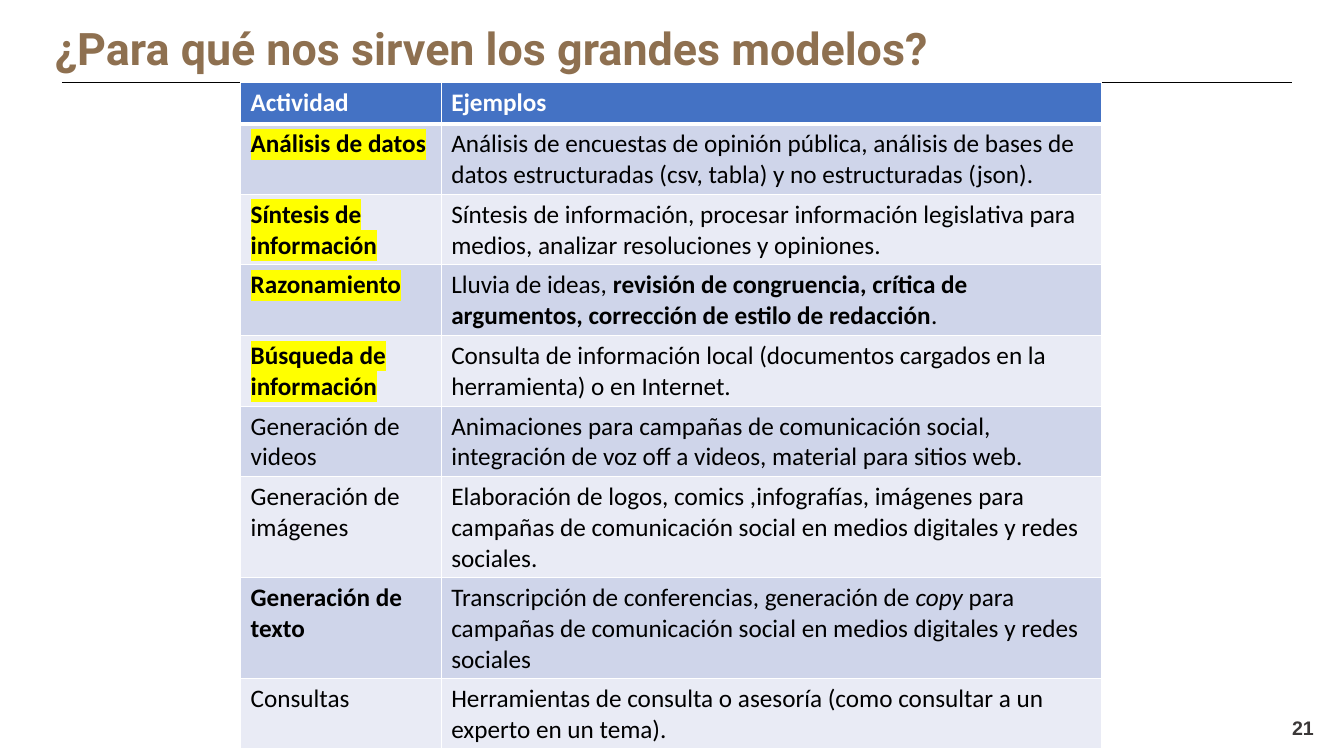
import pptx
import pptx.util
import pptx.dml.color
import pptx.enum.shapes
import pptx.enum.text
import pptx.oxml
import pptx.oxml.ns

WIDTH, HEIGHT = 13.33, 7.5
BLACK, WHITE, YELLOW = "000000", "FFFFFF", "FFFF00"
HEADER_FILL, BAND_FILLS = "4472C4", ("CFD5EA", "E9EBF5")
COLUMN_WIDTHS = (1.99, 6.55)
ROW_HEIGHT = 0.41

# Each row: activity, its style, and pieces of (example text, style)
ACTIVITIES = [
    ("Análisis de datos", "marked", [(
        "Análisis de encuestas de opinión pública, análisis de bases de datos "
        "estructuradas (csv, tabla) y no estructuradas (json).", "plain")]),
    ("Síntesis de información", "marked", [(
        "Síntesis de información, procesar información legislativa para "
        "medios, analizar resoluciones y opiniones.", "plain")]),
    ("Razonamiento", "marked", [
        ("Lluvia de ideas, ", "plain"),
        ("revisión de congruencia, crítica de argumentos, corrección de "
         "estilo de redacción", "bold"),
        (".", "plain")]),
    ("Búsqueda de información", "marked", [(
        "Consulta de información local (documentos cargados en la "
        "herramienta) o en Internet.", "plain")]),
    ("Generación de videos", "plain", [(
        "Animaciones para campañas de comunicación social, integración de "
        "voz off a videos, material para sitios web.", "plain")]),
    ("Generación de imágenes", "plain", [(
        "Elaboración de logos, comics ,infografías, imágenes para campañas "
        "de comunicación social en medios digitales y redes sociales.", "plain")]),
    ("Generación de texto", "bold", [
        ("Transcripción de conferencias, generación de ", "plain"),
        ("copy", "italic"),
        (" para campañas de comunicación social en medios digitales y redes "
         "sociales", "plain")]),
    ("Consultas", "plain", [(
        "Herramientas de consulta o asesoría (como consultar a un experto en "
        "un tema).", "plain")]),
]


def color(code):
    return pptx.dml.color.RGBColor.from_string(code)


def across(share):
    return pptx.util.Inches(WIDTH * share)


def down(share):
    return pptx.util.Inches(HEIGHT * share)


def set_font(font, name, size, code):
    font.name = name
    font.size = pptx.util.Pt(size)
    font.color.rgb = color(code)


def add_color_element(parent, tag, code):
    element = pptx.oxml.ns.qn(tag)
    holder = parent.makeelement(element, {})
    parent.append(holder)
    swatch = holder.makeelement(pptx.oxml.ns.qn("a:srgbClr"), {"val": code})
    holder.append(swatch)


def add_title(page, text):
    title = page.shapes.title
    title.left, title.top = across(0.031), down(0.015)
    title.width, title.height = across(0.938), down(0.095)
    frame = title.text_frame
    frame.text = text
    frame.margin_left = pptx.util.Inches(0.13)
    frame.vertical_anchor = pptx.enum.text.MSO_ANCHOR.MIDDLE
    para = frame.paragraphs[0]
    para.alignment = pptx.enum.text.PP_ALIGN.LEFT
    set_font(para.font, "Roboto", 32, "8E7050")
    para.font.bold = True


def add_rule(page, left, right, level):
    rule = page.shapes.add_connector(
        pptx.enum.shapes.MSO_CONNECTOR.STRAIGHT,
        across(left), down(level), across(right), down(level))
    rule.line.color.rgb = color(BLACK)
    rule.line.width = pptx.util.Pt(0.5)
    properties = rule._element.spPr
    properties.append(properties.makeelement(pptx.oxml.ns.qn("a:effectLst"), {}))


def add_page_number(page, number):
    box = page.shapes.add_textbox(
        across(0.76), down(0.932), across(0.225), down(0.053))
    frame = box.text_frame
    frame.word_wrap = True
    frame.vertical_anchor = pptx.enum.text.MSO_ANCHOR.BOTTOM
    para = frame.paragraphs[0]
    para.text = number
    para.alignment = pptx.enum.text.PP_ALIGN.RIGHT
    set_font(para.font, "Arial", 14, "3B3838")
    para.font.bold = True


def set_borders(cell, top, bottom):
    properties = cell._tc.get_or_add_tcPr()
    for tag, points in (("a:lnL", 1), ("a:lnR", 1), ("a:lnT", top), ("a:lnB", bottom)):
        line = properties.makeelement(
            pptx.oxml.ns.qn(tag), {"w": str(pptx.util.Pt(points))})
        properties.append(line)
        add_color_element(line, "a:solidFill", WHITE)


def fill_cell(cell, pieces, text_color, fill):
    para = cell.text_frame.paragraphs[0]
    set_font(para.font, "Calibri", 18, text_color)
    for text, style in pieces:
        span = para.add_run()
        span.text = text
        span.font.bold = style in ("bold", "marked")
        span.font.italic = style == "italic"
        span.font.color.rgb = color(text_color)
        if style == "marked":
            add_color_element(span.font._element, "a:highlight", YELLOW)
    cell.fill.solid()
    cell.fill.fore_color.rgb = color(fill)


def add_activity_table(page):
    rows = [[[("Actividad", "bold")], [("Ejemplos", "bold")]]]
    rows += [[[(name, style)], examples] for name, style, examples in ACTIVITIES]
    table = page.shapes.add_table(
        len(rows), len(COLUMN_WIDTHS), across(0.179), down(0.109),
        pptx.util.Inches(sum(COLUMN_WIDTHS)),
        pptx.util.Inches(ROW_HEIGHT * len(rows))).table
    for column, width in zip(table.columns, COLUMN_WIDTHS):
        column.width = pptx.util.Inches(width)
    for index, row in enumerate(rows):
        table.rows[index].height = pptx.util.Inches(ROW_HEIGHT)
        header = index == 0
        fill = HEADER_FILL if header else BAND_FILLS[(index - 1) % 2]
        for position, pieces in enumerate(row):
            cell = table.cell(index, position)
            set_borders(cell, top=3 if index == 1 else 1, bottom=3 if header else 1)
            fill_cell(cell, pieces, WHITE if header else BLACK, fill)


def main():
    deck = pptx.Presentation()
    deck.slide_width = pptx.util.Inches(WIDTH)
    deck.slide_height = pptx.util.Inches(HEIGHT)
    page = deck.slides.add_slide(deck.slide_layouts[5])

    # Heading, rule and page number
    add_title(page, "¿Para qué nos sirven los grandes modelos?")
    add_page_number(page, "21")
    add_rule(page, 0.046, 0.961, 0.109)

    # Activities with examples
    add_activity_table(page)

    deck.save("out.pptx")


if __name__ == "__main__":
    main()
